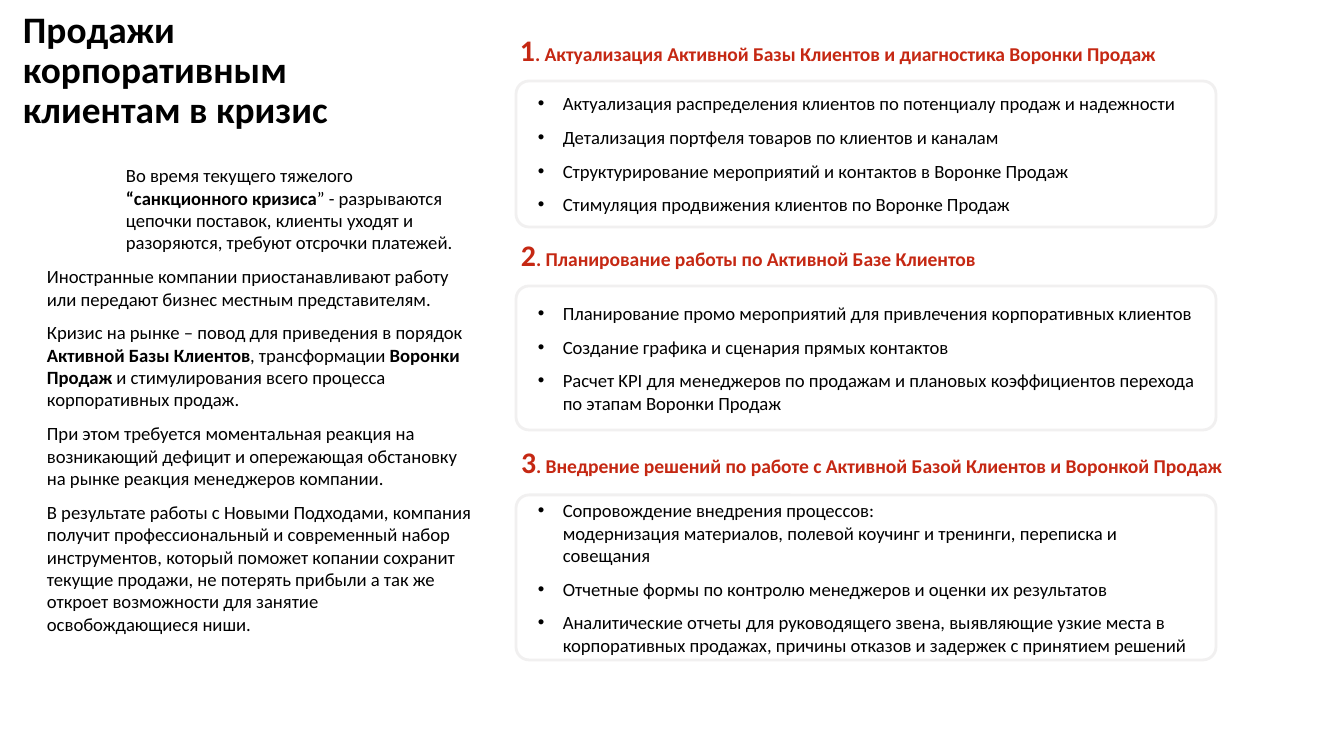
from lxml import etree
from pptx import Presentation
from pptx.dml.color import RGBColor
from pptx.enum.shapes import MSO_SHAPE
from pptx.enum.text import MSO_ANCHOR
from pptx.oxml.ns import qn
from pptx.util import Emu, Pt

ROUNDED = MSO_SHAPE.ROUNDED_RECTANGLE
TOP, MIDDLE = MSO_ANCHOR.TOP, MSO_ANCHOR.MIDDLE
BLACK = RGBColor(0x00, 0x00, 0x00)
RED = RGBColor(0xC5, 0x28, 0x13)
GRAY = RGBColor(0xF1, 0xF0, 0xF0)
FONT = "Calibri"

# Content: ** switches bold, a newline is a line break
TITLE = ["Продажи", "корпоративным\nклиентам в кризис"]
INTRO = [
    "Во время текущего тяжелого **“санкционного кризиса**” - разрываются цепочки "
    "поставок, клиенты уходят и разоряются, требуют отсрочки платежей.",
    "Иностранные компании приостанавливают работу или передают бизнес местным "
    "представителям.",
    "Кризис на рынке – повод для приведения в порядок **Активной Базы Клиентов**, "
    "трансформации **Воронки Продаж **и стимулирования всего процесса "
    "корпоративных продаж.",
    "При этом требуется моментальная реакция на возникающий дефицит и опережающая "
    "обстановку на рынке реакция менеджеров компании.",
    "В результате работы с Новыми Подходами, компания получит профессиональный и "
    "современный набор инструментов, который поможет копании сохранит текущие "
    "продажи, не потерять прибыли а так же откроет возможности для занятие "
    "освобождающиеся ниши.",
]
# (heading, heading box, card top, card height, points)
SECTIONS = [
    ("Актуализация Активной Базы Клиентов и диагностика Воронки Продаж",
     (507, 19, 703, 63), 81, 146,
     ["Актуализация распределения клиентов по потенциалу продаж и надежности",
      "Детализация портфеля товаров по клиентов и каналам",
      "Структурирование мероприятий и контактов в Воронке Продаж",
      "Стимуляция продвижения клиентов по Воронке Продаж"]),
    ("Планирование работы по Активной Базе Клиентов",
     (508, 224, 703, 63), 286, 144,
     ["Планирование промо мероприятий для привлечения корпоративных клиентов",
      "Создание графика и сценария прямых контактов",
      "Расчет KPI для менеджеров по продажам и плановых коэффициентов перехода "
      "по этапам Воронки Продаж"]),
    ("Внедрение решений по работе с Активной Базой Клиентов и Воронкой Продаж",
     (508, 431, 784, 63), 495, 165,
     ["Сопровождение внедрения процессов:\nмодернизация материалов, полевой "
      "коучинг и тренинги, переписка и совещания",
      "Отчетные формы по контролю менеджеров и оценки их результатов",
      "Аналитические отчеты для руководящего звена, выявляющие узкие места в "
      "корпоративных продажах, причины отказов и задержек с принятием решений"]),
]
CARD_LEFT, CARD_WIDTH, CARD_RADIUS = 516, 700, 13


def px(n):
    return Emu(round(n * 914400 / 134.4))


def set_indent(p, left, first=0, bullet=None):
    pPr = p._p.get_or_add_pPr()
    pPr.set("marL", str(px(left)))
    pPr.set("indent", str(px(first)))
    if bullet:
        etree.SubElement(pPr, qn("a:buFont")).set("typeface", "Arial")
        etree.SubElement(pPr, qn("a:buChar")).set("char", bullet)


def add_runs(p, text, size=10, color=BLACK, bold=False):
    for i, part in enumerate(text.split("**")):
        for j, line in enumerate(part.split("\n")):
            if j:
                p.add_line_break()
            r = p.add_run()
            r.text = line
            r.font.name, r.font.size = FONT, Pt(size)
            r.font.bold = bold or i % 2 == 1
            r.font.color.rgb = color


def write(s, paragraphs, inset=(0, 0), anchor=TOP, before=0, after=0,
          spacing=None, bullet=None, **font):
    tf = s.text_frame
    tf.word_wrap = True
    tf.vertical_anchor = anchor
    tf.margin_left = tf.margin_right = px(inset[0])
    tf.margin_top = tf.margin_bottom = px(inset[1])
    for i, text in enumerate(paragraphs):
        p = tf.add_paragraph() if i else tf.paragraphs[0]
        if bullet:
            set_indent(p, 32, -25, bullet)
        p.space_before = Pt(before if i else 0)
        p.space_after = Pt(after)
        if spacing:
            p.line_spacing = spacing
        add_runs(p, text, **font)
    return tf


prs = Presentation()
prs.slide_width, prs.slide_height = px(1344), px(756)
slide = prs.slides.add_slide(prs.slide_layouts[6])


def add_box(left, top, width, height):
    return slide.shapes.add_textbox(px(left), px(top), px(width), px(height))


# Left column: title and introduction
write(add_box(23, 11, 449, 134), TITLE, spacing=0.9, size=20, bold=True)
tf = write(add_box(47, 164, 425, 535), INTRO, before=6)
set_indent(tf.paragraphs[0], 79)

# Right column: numbered headings over cards
for number, (heading, box, top, height, points) in enumerate(SECTIONS, 1):
    s = slide.shapes.add_shape(ROUNDED, px(CARD_LEFT), px(top),
                               px(CARD_WIDTH), px(height))
    s.adjustments[0] = CARD_RADIUS / height
    s.shadow.inherit = False
    s.fill.background()
    s.line.color.rgb, s.line.width = GRAY, Pt(1.5)
    tf = write(s, points, inset=(11, 13), anchor=MIDDLE, before=3, after=3,
               bullet="•")
    for p in tf.paragraphs:
        p.alignment = 1

    tf = write(add_box(*box), [str(number)], inset=(13, 13), size=16,
               color=RED, bold=True)
    add_runs(tf.paragraphs[0], ". " + heading, size=10.5, color=RED, bold=True)

prs.save("out.pptx")
